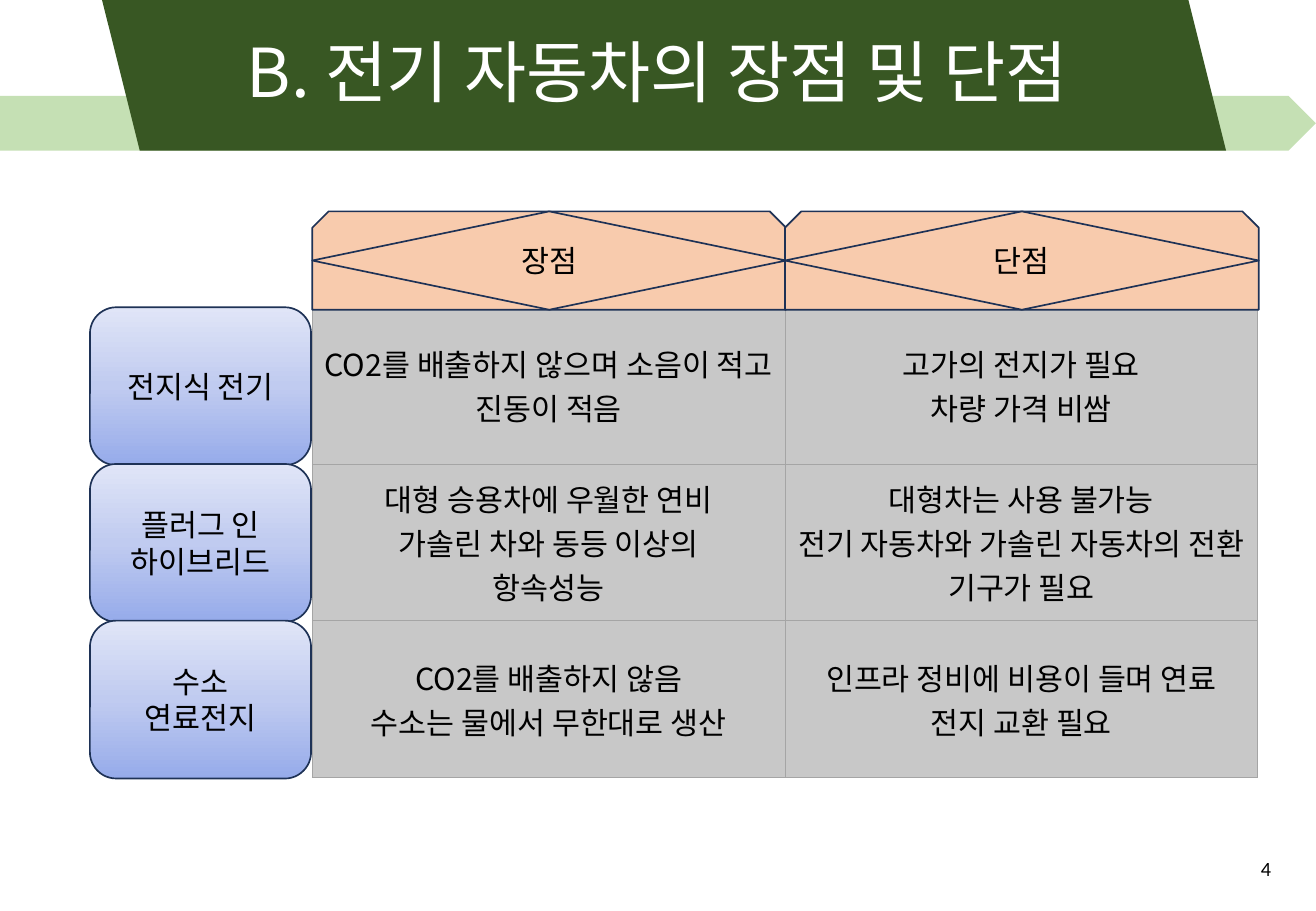
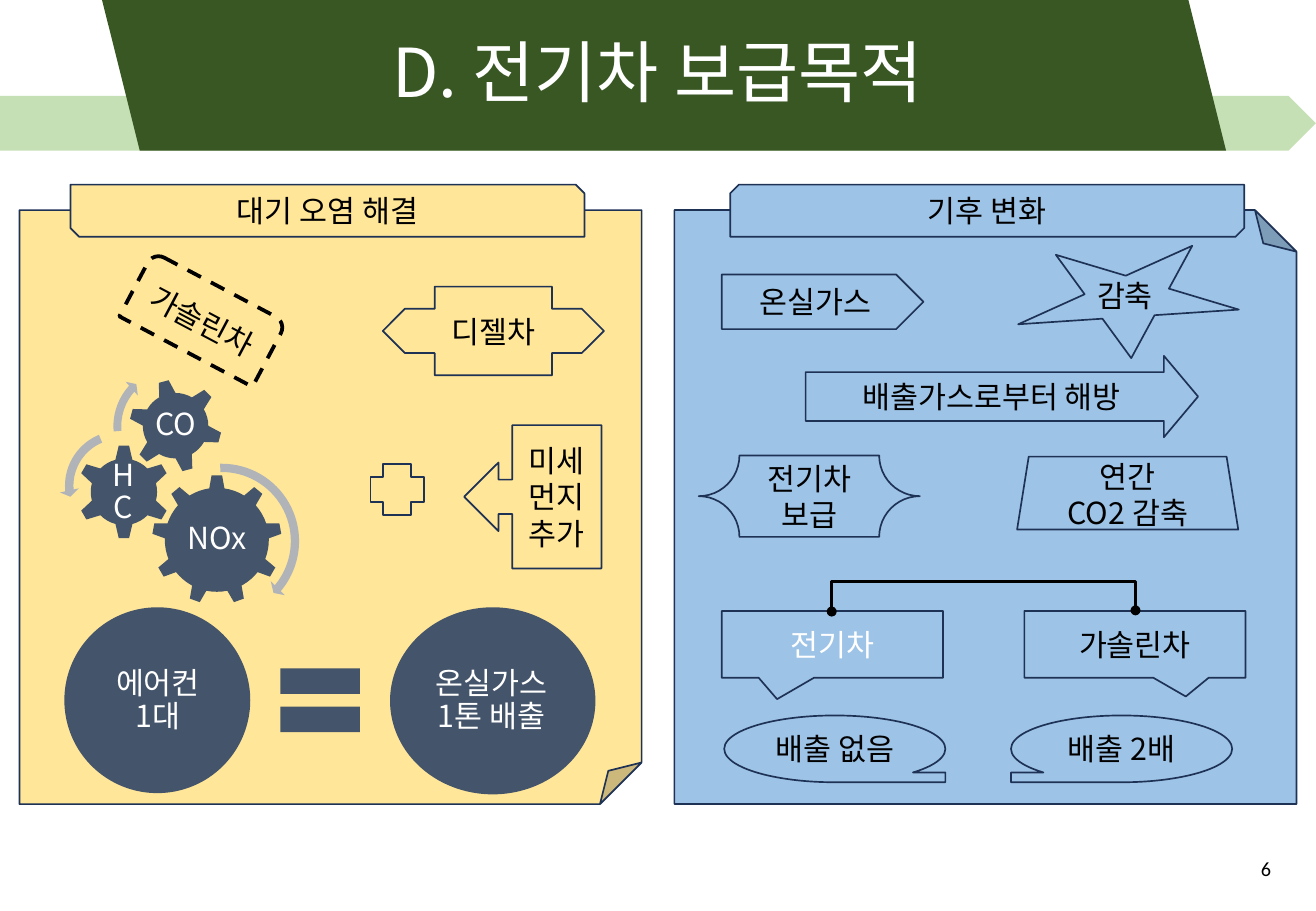
from copy import deepcopy
from dataclasses import dataclass

from lxml import etree
from pptx import Presentation
from pptx import util as u
from pptx.dml.color import RGBColor
from pptx.enum import dml, shapes, text
from pptx.oxml.ns import qn

S = shapes.MSO_SHAPE
A = text.PP_ALIGN


@dataclass(frozen=True)
class Theme:
    font: str = "Noto Sans CJK KR"
    number_font: str = "Calibri"
    title: int = 40
    body: int = 18
    number: int = 12
    black: str = "000000"
    white: str = "FFFFFF"
    band: str = "385723"
    ribbon: str = "C5E0B4"
    outline: str = "1E3256"
    header: str = "F8CBAD"
    cell: str = "C8C8C8"
    border: str = "A5A5A5"
    yellow: str = "FFE699"
    blue: str = "9DC3E6"
    slate: str = "44546A"
    arrow: str = "B0B4B9"
    gradient: tuple = ((0, "96ABEA"), (0.5, "C0CBF0"), (1, "E0E5F7"))


T = Theme()

COMPARISON = {
    "title": "B. 전기 자동차의 장점 및 단점",
    "number": "4",
    "headers": ["장점", "단점"],
    "rows": [
        (["전지식 전기"],
         ["CO2를 배출하지 않으며 소음이 적고 진동이 적음"],
         ["고가의 전지가 필요", "차량 가격 비쌈"]),
        (["플러그 인", "하이브리드"],
         ["대형 승용차에 우월한 연비", "가솔린 차와 동등 이상의", "항속성능"],
         ["대형차는 사용 불가능", "전기 자동차와 가솔린 자동차의 전환 기구가 필요"]),
        (["수소", "연료전지"],
         ["CO2를 배출하지 않음", "수소는 물에서 무한대로 생산"],
         ["인프라 정비에 비용이 들며 연료 전지 교환 필요"]),
    ],
}

PURPOSE = {"title": "D. 전기차 보급목적", "number": "6"}

# Each entry: preset, (left, top, width, height), paragraphs, further options
CLIMATE = [
    (S.FOLDED_CORNER, (5.55, 1.73, 5.12, 4.89), [], {"flip": "V", "adjust": [0.07]}),
    (S.PENTAGON, (5.94, 2.26, 1.66, 0.45), ["온실가스"], {}),
    (S.STAR_5_POINT, (8.37, 2.06, 1.82, 0.89), [], {"flip": "V", "turn": 356.2}),
    (S.RIGHT_ARROW, (6.63, 2.93, 3.23, 0.67), ["배출가스로부터 해방"],
     {"adjust": [0.6, 0.42]}),
    (S.PLAQUE, (5.75, 3.75, 1.82, 0.67), ["전기차", "보급"], {"adjust": [0.5]}),
    (S.TRAPEZOID, (8.37, 3.76, 1.82, 0.6), ["연간", "CO2 감축"], {"adjust": [0.16]}),
    (S.RECTANGULAR_CALLOUT, (8.43, 5.03, 1.82, 0.55), ["가솔린차"],
     {"adjust": [0.23, 0.78]}),
    (S.FLOWCHART_SEQUENTIAL_ACCESS_STORAGE, (5.96, 5.89, 1.82, 0.55), ["배출 없음"], {}),
    (S.SNIP_2_DIAG_RECTANGLE, (6.01, 1.52, 4.23, 0.43), ["기후 변화"], {"flip": "H"}),
    (S.RECTANGULAR_CALLOUT, (5.94, 5.03, 1.82, 0.55), ["전기차"],
     {"adjust": [-0.25, 0.82], "color": T.white}),
    (S.FLOWCHART_SEQUENTIAL_ACCESS_STORAGE, (8.32, 5.89, 1.82, 0.55), ["배출 2배"],
     {"flip": "H"}),
]

POLLUTION = [
    (S.FOLDED_CORNER, (0.16, 1.73, 5.12, 4.89), [], {"adjust": [0.07]}),
    (S.SNIP_2_DIAG_RECTANGLE, (0.58, 1.52, 4.23, 0.43), ["대기 오염 해결"], {}),
    (S.ROUND_2_SAME_RECTANGLE, (1.05, 2.33, 1.24, 0.6), ["가솔린차"],
     {"turn": 27.9, "line": T.black, "weight": 2.25, "dash": True}),
    (S.LEFT_RIGHT_ARROW_CALLOUT, (3.15, 2.36, 1.82, 0.73), ["디젤차"],
     {"adjust": [0.5, 0.25, 0.25, 0.53]}),
    (S.LEFT_ARROW_CALLOUT, (3.82, 3.5, 1.13, 1.18), ["미세먼지추가"], {}),
    (S.CROSS, (3.05, 3.82, 0.44, 0.42), [], {}),
]

EMISSIONS = [
    (S.GEAR_9, (1.25, 3.91, 1.07, 1.07), [], {}),
    (S.GEAR_6, (0.63, 3.66, 0.78, 0.78), [], {}),
    (S.GEAR_6, (1.06, 3.12, 0.77, 0.77), [], {"turn": 345}),
    (S.OVAL, (0.53, 5, 1.53, 1.53), [], {}),
    (S.MATH_EQUAL, (2.19, 5.32, 0.89, 0.89), [], {}),
    (S.OVAL, (3.21, 5, 1.69, 1.54), [], {}),
]

GEAR_ARROWS = [
    (S.CIRCULAR_ARROW, (1.14, 3.77, 1.37, 1.37), [],
     {"adjust": [0.05, 2.99, 24.03, 161.32, 0.06]}),
    (S.LEFT_CIRCULAR_ARROW, (0.49, 3.5, 1, 1), [],
     {"adjust": [0.07, 4.3, 104.89, 148.38, 0.08]}),
    (S.CIRCULAR_ARROW, (0.89, 2.97, 1.08, 1.08), [],
     {"adjust": [0.06, 3.94, 133.14, 105.08, 0.07]}),
]

EMISSION_LABELS = [
    ((1.47, 4.17, 0.64, 0.55), "NOx"),
    ((0.82, 3.86, 0.39, 0.39), "H\nC"),
    ((1.23, 3.29, 0.43, 0.43), "CO"),
    ((0.76, 5.23, 1.08, 1.08), "에어컨\n1대"),
    ((3.45, 5.23, 1.19, 1.09), "온실가스\n1톤 배출"),
]


def rgb(value):
    return RGBColor.from_string(value)


def inches(values):
    return [u.Inches(value) for value in values]


def write(frame, lines, color=T.black, size=T.body, align=A.CENTER, font=T.font,
          spacing=None):
    frame.word_wrap = True
    frame.vertical_anchor = text.MSO_ANCHOR.MIDDLE
    for index, line in enumerate(lines):
        para = frame.add_paragraph() if index else frame.paragraphs[0]
        para.text = line
        para.alignment = align
        if spacing:
            para.line_spacing = spacing
        para.font.size = u.Pt(size)
        para.font.color.rgb = rgb(color)
        para.font.name = font
        defaults = para._p.pPr.find(qn("a:defRPr"))
        etree.SubElement(defaults, qn("a:ea"), typeface=font)


def set_guides(props, values):
    """Write the adjustment values of a preset; a lone one is named adj."""
    guides = props.find(qn("a:prstGeom")).find(qn("a:avLst"))
    for old in list(guides):
        guides.remove(old)
    for index, value in enumerate(values, 1):
        name = f"adj{index}" if len(values) > 1 else "adj"
        etree.SubElement(guides, qn("a:gd"), name=name,
                         fmla=f"val {round(value * 100000)}")


def draw(slide, kind, at, lines=(), fill=None, line=T.outline, weight=1, dash=False,
         flip=None, turn=0, adjust=(), color=T.black):
    shape = slide.shapes.add_shape(kind, *inches(at))
    shape.shadow.inherit = False
    if fill:
        shape.fill.solid()
        shape.fill.fore_color.rgb = rgb(fill)
    if line:
        shape.line.color.rgb = rgb(line)
        shape.line.width = u.Pt(weight)
    else:
        shape.line.fill.background()
    if dash:
        shape.line.dash_style = dml.MSO_LINE.DASH
    if flip:
        shape.element.spPr.find(qn("a:xfrm")).set("flip" + flip, "1")
    shape.rotation = turn
    if adjust:
        set_guides(shape.element.spPr, adjust)
    if lines:
        write(shape.text_frame, lines, color)
    return shape


def draw_all(slide, entries, **shared):
    for kind, at, lines, options in entries:
        draw(slide, kind, at, lines, **{**shared, **options})


def add_text(slide, at, lines, inset=None, **style):
    frame = slide.shapes.add_textbox(*inches(at)).text_frame
    if inset is not None:
        frame.margin_left = frame.margin_right = u.Inches(inset)
        frame.margin_top = frame.margin_bottom = u.Inches(inset)
    write(frame, lines, **style)


def add_slide(deck, layout, content):
    slide = deck.slides.add_slide(layout)
    title = slide.shapes.title
    title.left, title.top, title.width, title.height = inches((0.74, 0, 9.34, 1.24))
    title.text_frame.auto_size = text.MSO_AUTO_SIZE.NONE
    write(title.text_frame, [content["title"]], T.white, T.title, spacing=0.9)
    add_text(slide, (8.12, 6.95, 2.44, 0.4), [content["number"]], size=T.number,
             align=A.RIGHT, font=T.number_font)
    return slide


def move_bands_to_layout(slide, layout):
    """Draw the title bands and place them behind everything on the layout."""
    ribbon = draw(slide, S.PENTAGON, (0, 0.79, 10.83, 0.45), fill=T.ribbon, line=None)
    band = draw(slide, S.PARALLELOGRAM, (0.84, 0, 9.25, 1.24), fill=T.band, line=None,
                flip="H")
    for index, shape in enumerate((ribbon, band)):
        layout.shapes.element.insert(2 + index, shape.element)


def shade(shape):
    """Fill a shape with the theme gradient, running upwards."""
    shape.fill.gradient()
    shape.fill.gradient_angle = 90
    first = shape.fill.gradient_stops[0]._gs
    first.addnext(deepcopy(first))
    for stop, (position, color) in zip(shape.fill.gradient_stops, T.gradient):
        stop.position = position
        stop.color.rgb = rgb(color)


def border(cell):
    props = cell._tc.get_or_add_tcPr()
    for index, side in enumerate(("lnL", "lnR", "lnT", "lnB")):
        edge = etree.Element(qn("a:" + side), w=str(int(u.Pt(0.5))))
        fill = etree.SubElement(edge, qn("a:solidFill"))
        etree.SubElement(fill, qn("a:srgbClr"), val=T.border)
        props.insert(index, edge)


def fill_comparison(slide):
    left, top, column, row = 2.57, 2.53, 3.89, 1.29
    headers, rows = COMPARISON["headers"], COMPARISON["rows"]
    table = slide.shapes.add_table(
        len(rows), len(headers),
        *inches((left, top, column * len(headers), row * len(rows)))).table
    table.first_row = table.horz_banding = False
    for r, (_, *cells) in enumerate(rows):
        for c, lines in enumerate(cells):
            cell = table.cell(r, c)
            cell.fill.solid()
            cell.fill.fore_color.rgb = rgb(T.cell)
            border(cell)
            cell.vertical_anchor = text.MSO_ANCHOR.MIDDLE
            write(cell.text_frame, lines)
    for c, header in enumerate(headers):
        at = (left + c * column, 1.74, 3.9, 0.81)
        draw(slide, S.SNIP_2_SAME_RECTANGLE, at, fill=T.header)
        draw(slide, S.DIAMOND, at, [header], fill=T.header)
    for r, (label, *_) in enumerate(rows):
        shade(draw(slide, S.ROUNDED_RECTANGLE, (0.74, top + r * row, 1.82, 1.3), label,
                   flip="H"))


def link_callouts(slide):
    """Join the two callouts with a bracket: a tall elbow turned on its side."""
    link = slide.shapes.add_connector(
        shapes.MSO_CONNECTOR.ELBOW, *inches((8.09, 3.78, 8.1, 6.28)))
    link.line.color.rgb = rgb(T.black)
    link.line.width = u.Pt(1.5)
    props = link._element.spPr
    frame = props.find(qn("a:xfrm"))
    for name, value in (("rot", "5400000"), ("flipH", "1"), ("flipV", "1")):
        frame.set(name, value)
    guides = props.find(qn("a:prstGeom")).find(qn("a:avLst"))
    etree.SubElement(guides, qn("a:gd"), name="adj1", fmla="val 2500000")
    for end in ("headEnd", "tailEnd"):
        etree.SubElement(props.find(qn("a:ln")), qn("a:" + end), type="oval")
    etree.SubElement(props, qn("a:effectLst"))


def fill_purpose(slide):
    draw_all(slide, CLIMATE, fill=T.blue)
    link_callouts(slide)
    add_text(slide, (8.93, 2.23, 0.77, 0.4), ["감축"], align=A.LEFT)
    draw_all(slide, POLLUTION, fill=T.yellow)
    draw_all(slide, EMISSIONS, fill=T.slate, line=None)
    draw_all(slide, GEAR_ARROWS, fill=T.arrow, line=None)
    for at, label in EMISSION_LABELS:
        add_text(slide, at, [label], inset=0.03, color=T.white, spacing=0.9)


def main():
    deck = Presentation()
    deck.slide_width, deck.slide_height = inches((10.83, 7.5))
    layout = deck.slide_layouts[5]
    comparison = add_slide(deck, layout, COMPARISON)
    move_bands_to_layout(comparison, layout)
    fill_comparison(comparison)
    fill_purpose(add_slide(deck, layout, PURPOSE))
    deck.save("out.pptx")


if __name__ == "__main__":
    main()
